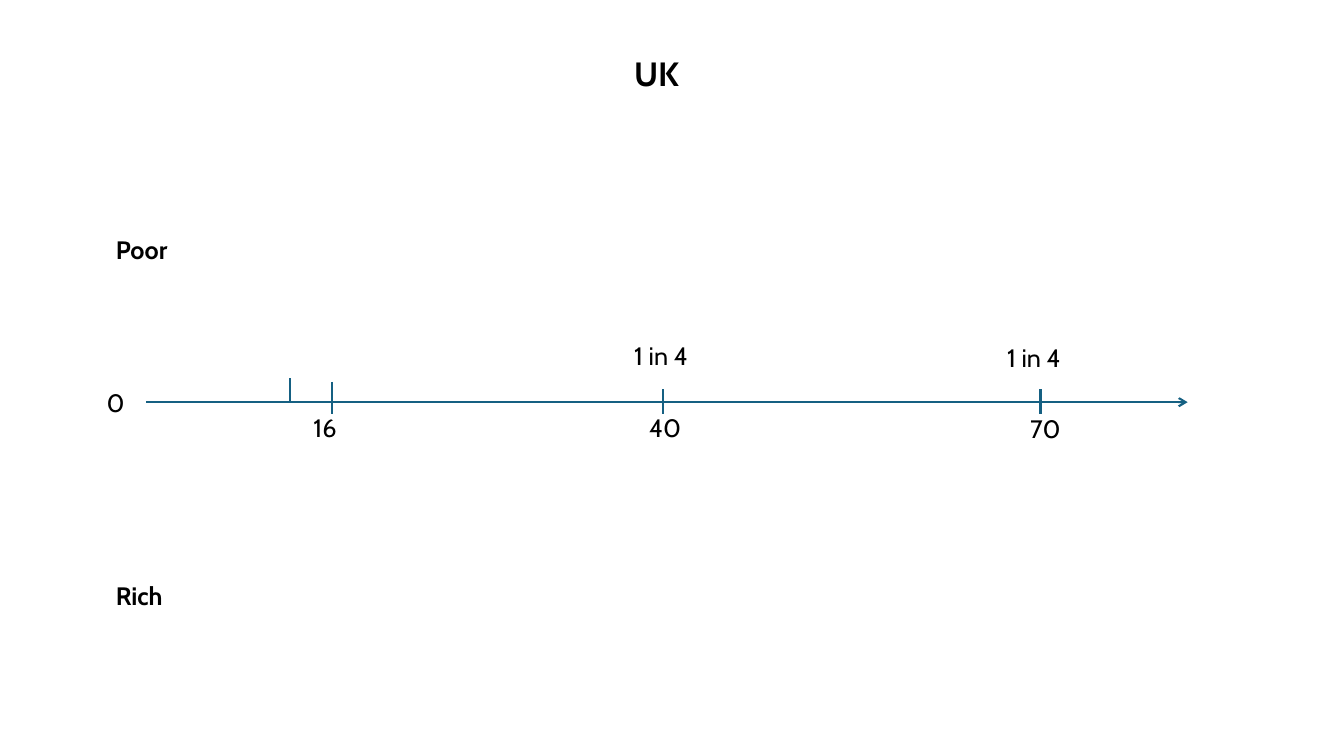
from lxml import etree
from pptx import Presentation
from pptx.dml.color import RGBColor
from pptx.enum.shapes import MSO_CONNECTOR
from pptx.enum.text import MSO_AUTO_SIZE
from pptx.oxml.ns import qn
from pptx.util import Inches, Pt

STRAIGHT = MSO_CONNECTOR.STRAIGHT
GROW = MSO_AUTO_SIZE.SHAPE_TO_FIT_TEXT
COLORS = {"text": "000000", "axis": "156082"}
TITLE = {"size": Pt(24), "bold": True}
HEADING = {"size": Pt(18), "bold": True}
LABEL = {"size": Pt(18), "bold": False}
LABEL_HEIGHT = 5.33
AXIS_Y = 53.2
TICK_HEIGHT = 3.33


class TimelinePage:
    def __init__(self, deck):
        self.deck = deck
        self.page = deck.slides.add_slide(deck.slide_layouts[6])
        self.font = "Cabin"
        self.line_width = Pt(1.5)

    def across(self, percent):
        return round(self.deck.slide_width * percent / 100)

    def down(self, percent):
        return round(self.deck.slide_height * percent / 100)

    def text(self, words, left, top, width, style, height=LABEL_HEIGHT):
        box = self.page.shapes.add_textbox(
            self.across(left), self.down(top), self.across(width), self.down(height))
        frame = box.text_frame
        frame.word_wrap = True
        frame.auto_size = GROW
        span = frame.paragraphs[0].add_run()
        span.text = words
        for name, value in {"name": self.font, **style}.items():
            setattr(span.font, name, value)
        span.font.color.rgb = RGBColor.from_string(COLORS["text"])

    def line(self, x1, y1, x2, y2, arrow=False):
        connector = self.page.shapes.add_connector(
            STRAIGHT, self.across(x1), self.down(y1), self.across(x2), self.down(y2))
        connector.line.width = self.line_width
        connector.line.color.rgb = RGBColor.from_string(COLORS["axis"])
        properties = connector.element.spPr
        if arrow:
            outline = properties.find(qn("a:ln"))
            etree.SubElement(outline, qn("a:tailEnd"), type="arrow")
        etree.SubElement(properties, qn("a:effectLst"))

    def tick(self, x, top):
        self.line(x, top, x, top + TICK_HEIGHT)


def main():
    deck = Presentation()
    deck.slide_width = Inches(13.33)
    deck.slide_height = Inches(7.5)
    timeline = TimelinePage(deck)

    timeline.text("UK", 46.44, 6.4, 14.4, TITLE, height=6.67)
    timeline.line(10.88, AXIS_Y, 88.37, AXIS_Y, arrow=True)

    for group, top in (("Rich", 76.13), ("Poor", 30.4)):
        timeline.text(group, 7.88, top, 10.65, HEADING)

    timeline.text("0", 7.2, 50.53, 2.93, LABEL)
    for age, left, top in (("70", 75.92, 54), ("40", 47.56, 53.87), ("16", 22.58, 53.87)):
        timeline.text(age, left, top, 4.2, LABEL)

    for x, top in ((24.68, 51.47), (49.36, 51.47), (24.68, 50.53), (77.42, 51.47)):
        timeline.tick(x, top)
    timeline.line(21.61, AXIS_Y, 21.61, 50)

    for left, top in ((46.44, 44.4), (74.19, 44.67)):
        timeline.text("1 in 4", left, top, 6.53, LABEL)

    deck.save("out.pptx")


if __name__ == "__main__":
    main()
